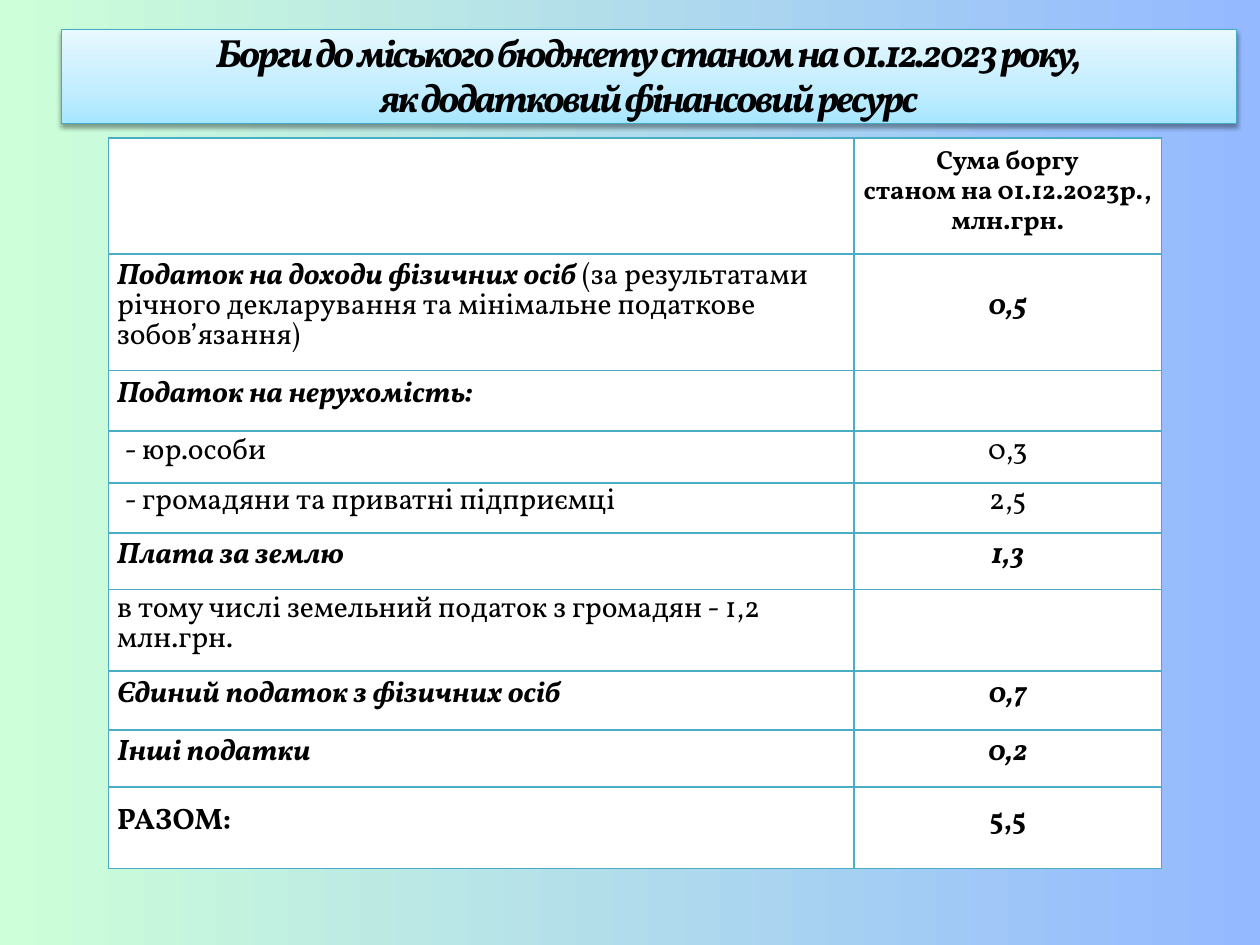
from copy import deepcopy

from lxml import etree
from pptx import Presentation
from pptx.dml.color import RGBColor
from pptx.enum.text import MSO_ANCHOR, MSO_AUTO_SIZE, PP_ALIGN
from pptx.oxml import parse_xml
from pptx.oxml.ns import nsdecls, qn
from pptx.util import Cm, Pt

CENTER, LEFT = PP_ALIGN.CENTER, PP_ALIGN.LEFT
TOP, MIDDLE = MSO_ANCHOR.TOP, MSO_ANCHOR.MIDDLE
GROW = MSO_AUTO_SIZE.SHAPE_TO_FIT_TEXT
TITLE_ONLY = 5
FONT = "Vollkorn"

COLORS = {
    "text": "000000",
    "cell": "FFFFFF",
    "border": "4BACC6",
    "page_start": "CDFFD8",
    "page_end": "94B9FF",
    "title_bottom": "A7E6FF",
    "title_middle": "C1EDFF",
    "title_top": "E7F8FF",
    "title_line": "46AAC5",
}

TITLE_LINES = [
    "Борги до міського бюджету станом на 01.12.2023 року,",
    "як додатковий фінансовий ресурс",
]
DEBT_HEADER = ["Сума боргу", "станом на 01.12.2023р., млн.грн."]

# Each style is (bold, italic)
PLAIN, BOLD, BOLD_ITALIC = (False, False), (True, False), (True, True)

# Row height in cm, label runs, debt, debt style, extra label indent in cm
DEBTS = [
    (2.51, [("Податок на доходи фізичних осіб ", BOLD_ITALIC),
            ("(за результатами річного декларування та мінімальне податкове "
             "зобов’язання)", PLAIN)], "0,5", BOLD_ITALIC, 0),
    (1.3, [("Податок на нерухомість:", BOLD_ITALIC)], "", PLAIN, 0),
    (1.12, [("- юр.особи", PLAIN)], "0,3", PLAIN, 0.16),
    (1.07, [("- громадяни та приватні підприємці", PLAIN)], "2,5", PLAIN, 0.16),
    (1.22, [("Плата за землю", BOLD_ITALIC)], "1,3", BOLD_ITALIC, 0),
    (1.75, [("в тому числі земельний податок з громадян - 1,2 млн.грн.", PLAIN)],
     "", PLAIN, 0),
    (1.27, [("Єдиний податок з фізичних осіб", BOLD_ITALIC)], "0,7", BOLD_ITALIC, 0),
    (1.22, [("Інші податки", BOLD_ITALIC)], "0,2", BOLD_ITALIC, 0),
    (1.75, [("РАЗОМ:", BOLD)], "5,5", BOLD, 0),
]
HEADER_HEIGHT = 2.49
COLUMN_WIDTHS = (16.03, 6.61)
CELL_MARGIN = 0.18


def rgb(name):
    return RGBColor.from_string(COLORS[name])


def set_font(font, size, style):
    font.name, font.size = FONT, Pt(size)
    font.bold, font.italic = style
    font.color.rgb = rgb("text")


def set_gradient(fill, start, end, angle):
    fill.gradient()
    fill.gradient_angle = angle
    for stop, position, name in zip(fill.gradient_stops, (0, 1), (start, end)):
        stop.position = position
        stop.color.rgb = rgb(name)


def add_middle_stop(shape, position, name):
    first = shape.element.spPr.find(".//" + qn("a:gs"))
    middle = deepcopy(first)
    middle.set("pos", str(position * 1000))
    middle.find(qn("a:srgbClr")).set("val", COLORS[name])
    first.addnext(middle)


def add_shadow(shape):
    shape.element.spPr.append(parse_xml(
        f'<a:effectLst {nsdecls("a")}>'
        '<a:outerShdw blurRad="39400" dist="20300" dir="5400000" rotWithShape="0">'
        '<a:srgbClr val="000000"><a:alpha val="38000"/></a:srgbClr>'
        '</a:outerShdw></a:effectLst>'))


def write_paragraph(frame, index, runs, size, align, spacing):
    paragraph = frame.paragraphs[0] if index == 0 else frame.add_paragraph()
    paragraph.alignment = align
    paragraph.line_spacing = Pt(spacing)
    for text, style in runs:
        run = paragraph.add_run()
        run.text = text
        if len(runs) > 1:
            set_font(run.font, size, style)
    if len(runs) == 1:
        set_font(paragraph.font, size, runs[0][1])
    return paragraph


def format_title(title):
    title.left, title.top = Cm(1.32), Cm(0.64)
    title.width, title.height = Cm(25.27), Cm(2.01)
    set_gradient(title.fill, "title_bottom", "title_top", 90)
    add_middle_stop(title, 35, "title_middle")
    title.line.color.rgb = rgb("title_line")
    title.line.width = Pt(0.75)
    add_shadow(title)

    frame = title.text_frame
    frame.word_wrap = True
    frame.auto_size = GROW
    frame.vertical_anchor = TOP
    frame.margin_left = frame.margin_right = 0
    frame.margin_top = frame.margin_bottom = 0
    for index, line in enumerate(TITLE_LINES):
        paragraph = write_paragraph(frame, index, [(line, BOLD_ITALIC)], 24, CENTER, 27.7)
        # Tight letter spacing, in hundredths of a point
        paragraph.runs[0].font._element.set("spc", "-160")


def add_borders(cell):
    properties = cell._tc.get_or_add_tcPr()
    for index, side in enumerate(("lnL", "lnR", "lnT", "lnB")):
        border = etree.Element(qn(f"a:{side}"), w=str(Pt(1)))
        fill = etree.SubElement(border, qn("a:solidFill"))
        etree.SubElement(fill, qn("a:srgbClr"), val=COLORS["border"])
        properties.insert(index, border)


def fill_cell(cell, paragraphs, size, align, indent=0):
    cell.fill.solid()
    cell.fill.fore_color.rgb = rgb("cell")
    add_borders(cell)
    cell.vertical_anchor = MIDDLE
    cell.margin_left = Cm(CELL_MARGIN + indent)
    cell.margin_right = cell.margin_top = cell.margin_bottom = Cm(CELL_MARGIN)
    for index, runs in enumerate(paragraphs):
        write_paragraph(cell.text_frame, index, runs, size, align, 18.2)


def add_debt_table(slide):
    heights = [HEADER_HEIGHT] + [row[0] for row in DEBTS]
    table = slide.shapes.add_table(
        len(heights), len(COLUMN_WIDTHS), Cm(2.34), Cm(2.97),
        Cm(sum(COLUMN_WIDTHS)), Cm(sum(heights))).table
    table.first_row = table.horz_banding = False
    for column, width in zip(table.columns, COLUMN_WIDTHS):
        column.width = Cm(width)
    for row, height in zip(table.rows, heights):
        row.height = Cm(height)

    # Header row
    fill_cell(table.cell(0, 0), [], 16, LEFT)
    fill_cell(table.cell(0, 1), [[(line, BOLD)] for line in DEBT_HEADER], 16, CENTER)

    # Debts by tax
    for index, (_, label, debt, style, indent) in enumerate(DEBTS, start=1):
        fill_cell(table.cell(index, 0), [label], 18, LEFT, indent)
        fill_cell(table.cell(index, 1), [[(debt, style)]] if debt else [], 18, CENTER)


def main():
    presentation = Presentation()
    presentation.slide_width, presentation.slide_height = Cm(27.1), Cm(20.32)
    slide = presentation.slides.add_slide(presentation.slide_layouts[TITLE_ONLY])
    set_gradient(slide.background.fill, "page_start", "page_end", 0)
    add_debt_table(slide)
    format_title(slide.shapes.title)
    presentation.save("out.pptx")


if __name__ == "__main__":
    main()
